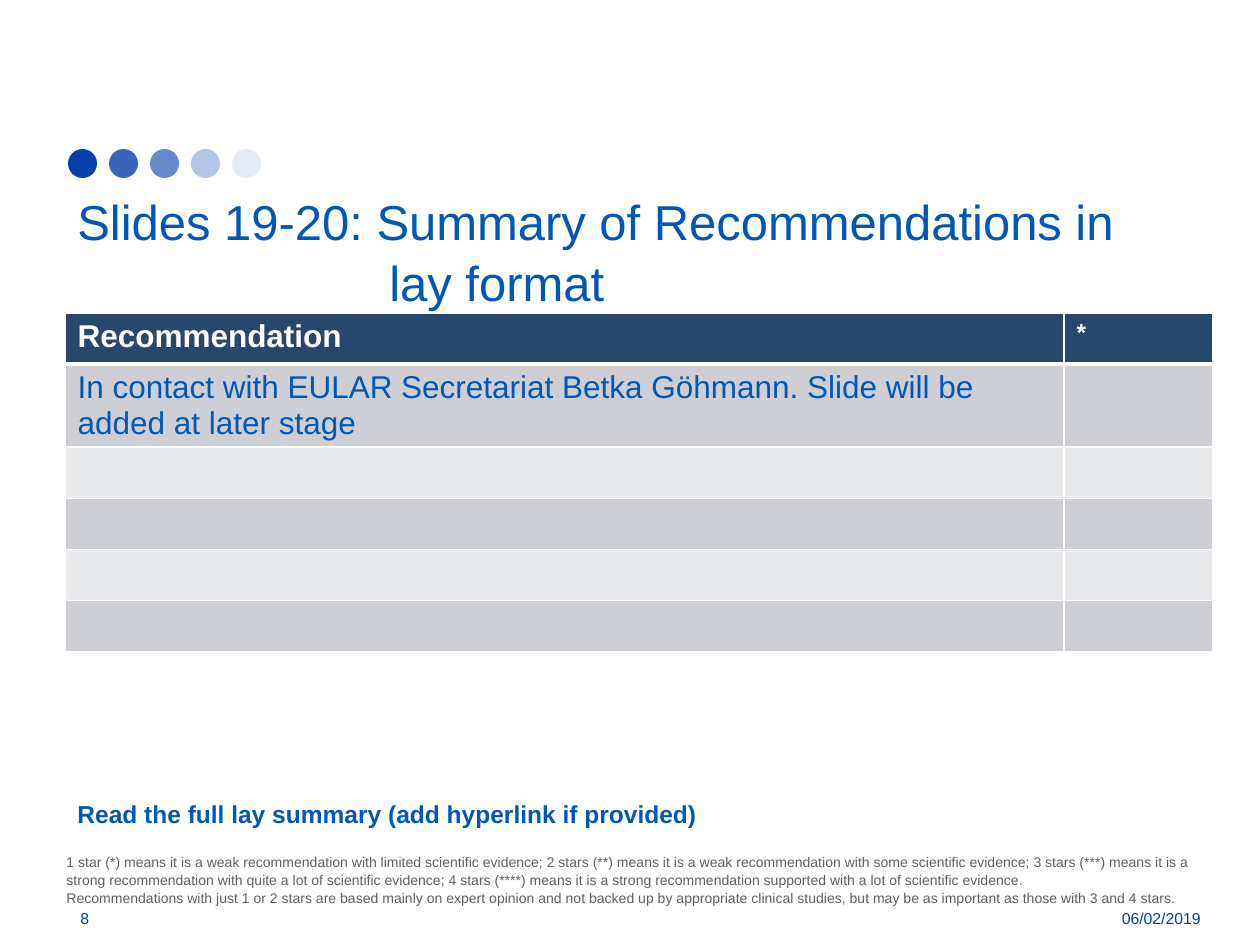
from lxml.etree import SubElement
from pptx import Presentation
from pptx.dml.color import RGBColor
from pptx.enum.shapes import MSO_SHAPE
from pptx.enum.text import MSO_ANCHOR, PP_ALIGN
from pptx.oxml.ns import qn
from pptx.util import Emu, Pt

COLORS = {
    "white": "FFFFFF",
    "title": "0057B8",
    "dot": "063FA9",
    "footer": "003FA8",
    "note": "5F5F5F",
    "header": "28476D",
    "dark_band": "CDCFD4",
    "light_band": "E8E9EB",
}
FONT = "Arial"
DOT_OPACITIES = [100, 80, 61, 30, 10]
COLUMN_WIDTHS = [999, 149]
ROW_HEIGHTS = [51, 83, 51, 51, 51, 51]
TABLE_TEXT = {
    (0, 0): ("Recommendation", 18, "white", True),
    (0, 1): ("*", 14, "white", True),
    (1, 0): (
        "In contact with EULAR Secretariat Betka Göhmann. "
        "Slide will be added at later stage", 18, "title", False),
}
STAR_NOTE = (
    "1 star (*) means it is a weak recommendation with limited scientific "
    "evidence; 2 stars (**) means it is a weak recommendation with some "
    "scientific evidence; 3 stars (***) means it is a strong recommendation "
    "with quite a lot of scientific evidence; 4 stars (****) means it is a "
    "strong recommendation supported with a lot of scientific evidence.\v"
    "Recommendations with just 1 or 2 stars are based mainly on expert opinion "
    "and not backed up by appropriate clinical studies, but may be as important "
    "as those with 3 and 4 stars."
)


def px(length):
    return Emu(round(length * 914400 / 126))


def color(name):
    return RGBColor.from_string(COLORS[name])


def style_text(frame, text, size, color_name, bold=False):
    frame.text = text
    paragraph = frame.paragraphs[0]
    for span in paragraph.runs:
        span.font.name = FONT
        span.font.size = Pt(size)
        span.font.bold = bold
        span.font.color.rgb = color(color_name)
    return paragraph


def add_text(page, box, text, size, color_name, bold=False,
             anchor=MSO_ANCHOR.TOP):
    frame = page.shapes.add_textbox(*map(px, box)).text_frame
    frame.word_wrap = True
    frame.vertical_anchor = anchor
    return style_text(frame, text, size, color_name, bold)


def add_dots(page, box):
    left, top, width, size = box
    step = (width - size) / (len(DOT_OPACITIES) - 1)
    for index, opacity in enumerate(DOT_OPACITIES):
        dot = page.shapes.add_shape(
            MSO_SHAPE.OVAL, px(left + index * step), px(top), px(size), px(size))
        dot.shadow.inherit = False
        dot.line.fill.background()
        dot.fill.solid()
        dot.fill.fore_color.rgb = color("dot")
        if opacity < 100:
            tint = dot.fill._xPr.find(qn("a:solidFill"))[0]
            SubElement(tint, qn("a:alpha"), val=str(opacity * 1000))


def add_title(page, box):
    title = add_text(
        page, box, "Slides 19-20: Summary of Recommendations in\vlay format",
        28, "title")
    title.line_spacing = 1.05
    # Hanging indent sets the second line further right
    properties = title._p.get_or_add_pPr()
    properties.set("marL", str(px(312)))
    properties.set("indent", str(px(-312)))


def set_borders(cell, bottom_width):
    properties = cell._tc.get_or_add_tcPr()
    widths = {"a:lnL": 1, "a:lnR": 1, "a:lnT": 1, "a:lnB": bottom_width}
    for position, (side, width) in enumerate(widths.items()):
        line = SubElement(properties, qn(side), w=str(Pt(width)))
        SubElement(SubElement(line, qn("a:solidFill")), qn("a:srgbClr"),
                   val=COLORS["white"])
        properties.insert(position, line)


def add_recommendations(page, box):
    table = page.shapes.add_table(
        len(ROW_HEIGHTS), len(COLUMN_WIDTHS), *map(px, box)).table
    for column, width in zip(table.columns, COLUMN_WIDTHS):
        column.width = px(width)
    for row_index, (row, height) in enumerate(zip(table.rows, ROW_HEIGHTS)):
        row.height = px(height)
        band = "dark_band" if row_index % 2 else "light_band"
        for column_index, cell in enumerate(row.cells):
            cell.fill.solid()
            cell.fill.fore_color.rgb = color(band if row_index else "header")
            set_borders(cell, 1 if row_index else 3)
            content = TABLE_TEXT.get((row_index, column_index))
            if content:
                style_text(cell.text_frame, *content)


def add_footer(page, box):
    left, top, width, height = box
    add_text(page, (left, top, 121, height), "8", 9, "footer",
             anchor=MSO_ANCHOR.MIDDLE)
    date = add_text(page, (left + width - 169, top, 169, height), "06/02/2019",
                    9, "footer", anchor=MSO_ANCHOR.MIDDLE)
    date.alignment = PP_ALIGN.RIGHT


def build_slide(deck):
    page = deck.slides.add_slide(deck.slide_layouts[6])
    add_dots(page, (68, 149, 193, 29))
    add_recommendations(page, (65, 313, sum(COLUMN_WIDTHS), sum(ROW_HEIGHTS)))
    add_title(page, (65, 182, 1148, 130))
    add_footer(page, (68, 893, 1145, 50))
    # Reading notes under the table
    note = add_text(page, (54, 847, 1152, 63), STAR_NOTE, 8, "note")
    note.line_spacing = 1.05
    add_text(page, (65, 793, 722, 43),
             "Read the full lay summary (add hyperlink if provided)",
             14, "title", bold=True)


def main():
    deck = Presentation()
    deck.slide_width, deck.slide_height = px(1260), px(945)
    build_slide(deck)
    deck.save("out.pptx")


if __name__ == "__main__":
    main()
